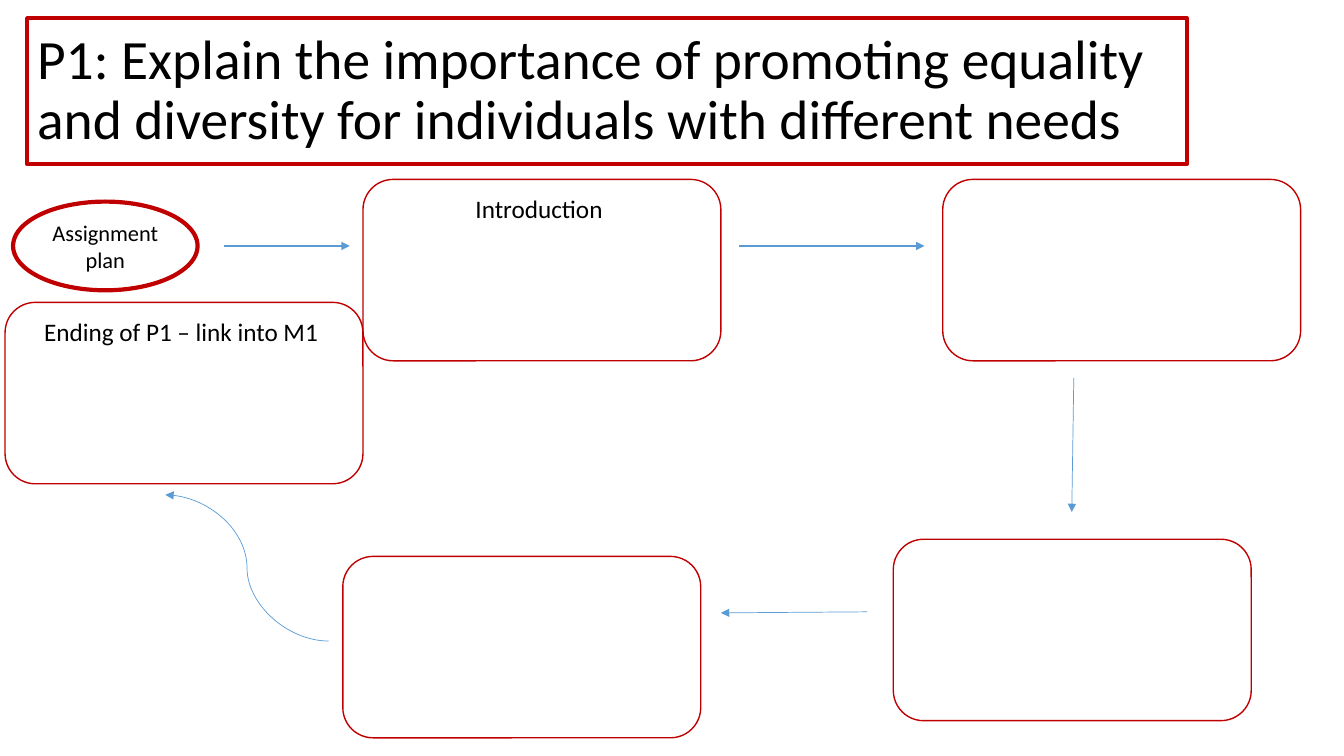
"""Build the P1 assignment plan slide: a title and a loop of boxes joined by arrows."""
from lxml.etree import SubElement
from pptx import Presentation
from pptx.dml.color import RGBColor
from pptx.enum.shapes import MSO_CONNECTOR, MSO_SHAPE
from pptx.enum.text import MSO_ANCHOR, PP_ALIGN
from pptx.oxml.ns import qn
from pptx.util import Inches, Pt

RED = RGBColor(0xC0, 0x00, 0x00)
BLUE = RGBColor(0x5B, 0x9B, 0xD5)
BLACK = RGBColor(0x00, 0x00, 0x00)
FONT = "Calibri"

TITLE = ("P1: Explain the importance of promoting equality "
         "and diversity for individuals with different needs")
START = "Assignment plan"
BOX_SIZE = (3.55, 1.8)
BOXES = [
    (3.6, 1.78, "Introduction "),
    (9.35, 1.78, ""),
    (8.86, 5.35, ""),
    (3.4, 5.52, ""),
    (0.05, 3, "Ending of P1 – link into M1 "),
]
STRAIGHT, CURVE = MSO_CONNECTOR.STRAIGHT, MSO_CONNECTOR.CURVE
ARROWS = [
    (STRAIGHT, (2.22, 2.44), (3.47, 2.44), 1.5),
    (STRAIGHT, (7.33, 2.44), (9.17, 2.44), 1.5),
    (STRAIGHT, (10.65, 3.75), (10.63, 5.08), 0.5),
    (STRAIGHT, (8.6, 6.07), (7.15, 6.08), 0.5),
    (CURVE, (3.26, 6.36), (1.64, 4.91), 0.5),
]


def add_outlined(slide, kind, bounds, line_width, text, size,
                 anchor=MSO_ANCHOR.MIDDLE, alignment=PP_ALIGN.CENTER):
    shape = slide.shapes.add_shape(kind, *map(Inches, bounds))
    shape.shadow.inherit = False
    shape.fill.background()
    shape.line.color.rgb = RED
    shape.line.width = Pt(line_width)
    if text:
        text_frame = shape.text_frame
        text_frame.word_wrap = True
        text_frame.vertical_anchor = anchor
        text_frame.text = text
        paragraph = text_frame.paragraphs[0]
        paragraph.alignment = alignment
        font = paragraph.runs[0].font
        font.name = FONT
        font.size = Pt(size)
        font.color.rgb = BLACK
    return shape


def add_arrow(slide, kind, start, end, width):
    arrow = slide.shapes.add_connector(kind, *map(Inches, start + end))
    arrow.line.color.rgb = BLUE
    arrow.line.width = Pt(width)
    SubElement(arrow.line._get_or_add_ln(), qn("a:tailEnd"), type="triangle")
    SubElement(arrow._element.spPr, qn("a:effectLst"))


def main():
    presentation = Presentation()
    presentation.slide_width = Inches(13.33)
    presentation.slide_height = Inches(7.5)
    slide = presentation.slides.add_slide(presentation.slide_layouts[6])

    title = add_outlined(slide, MSO_SHAPE.RECTANGLE, (0.27, 0.18, 11.5, 1.45),
                         3, TITLE, 39.6, alignment=PP_ALIGN.LEFT)
    title.text_frame.paragraphs[0].line_spacing = 0.9
    add_outlined(slide, MSO_SHAPE.OVAL, (0.13, 2, 1.83, 0.88), 3, START, 16)
    for left, top, text in BOXES:
        add_outlined(slide, MSO_SHAPE.ROUNDED_RECTANGLE, (left, top, *BOX_SIZE),
                     1, text, 18, anchor=MSO_ANCHOR.TOP)
    for arrow in ARROWS:
        add_arrow(slide, *arrow)

    presentation.save("out.pptx")


if __name__ == "__main__":
    main()
